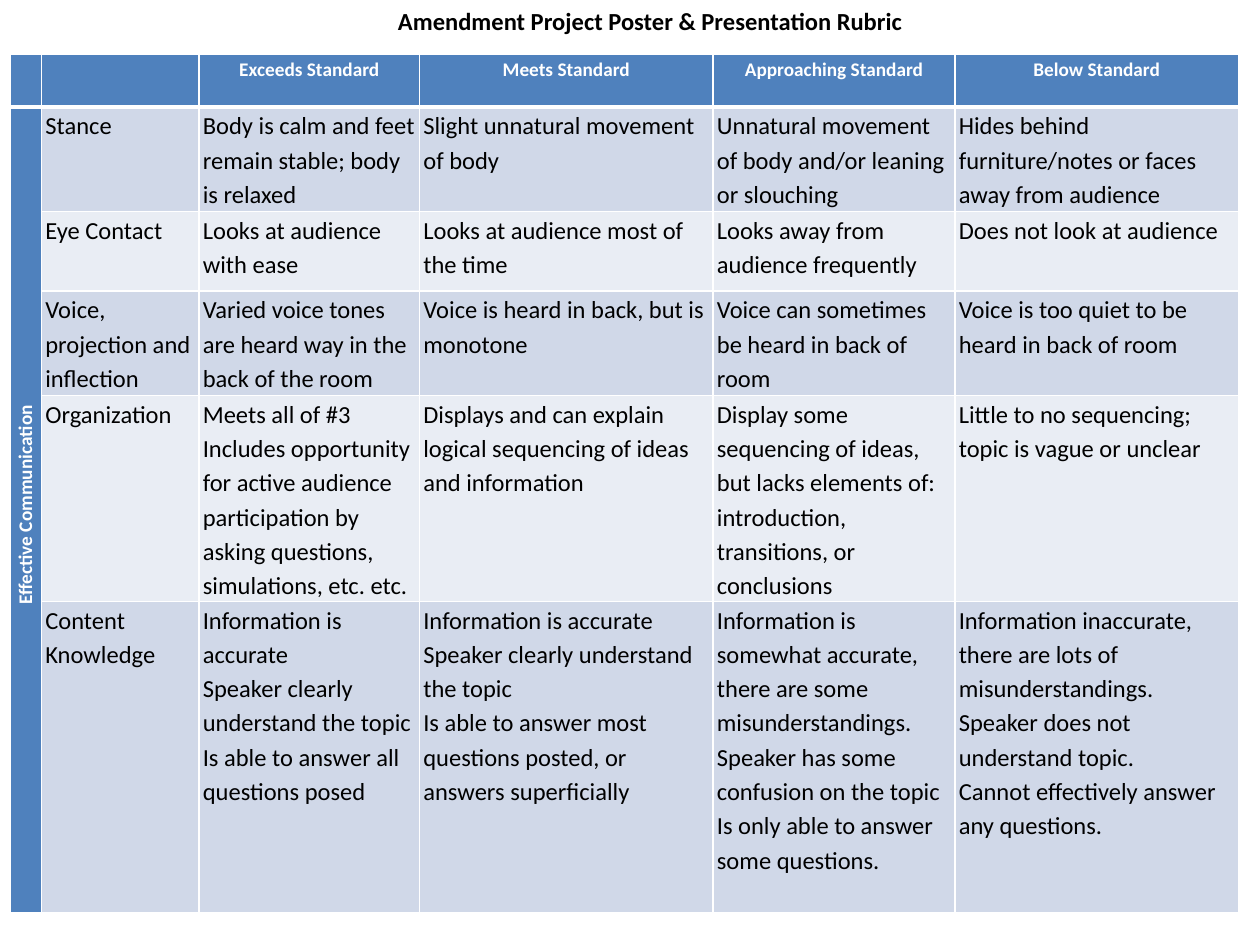
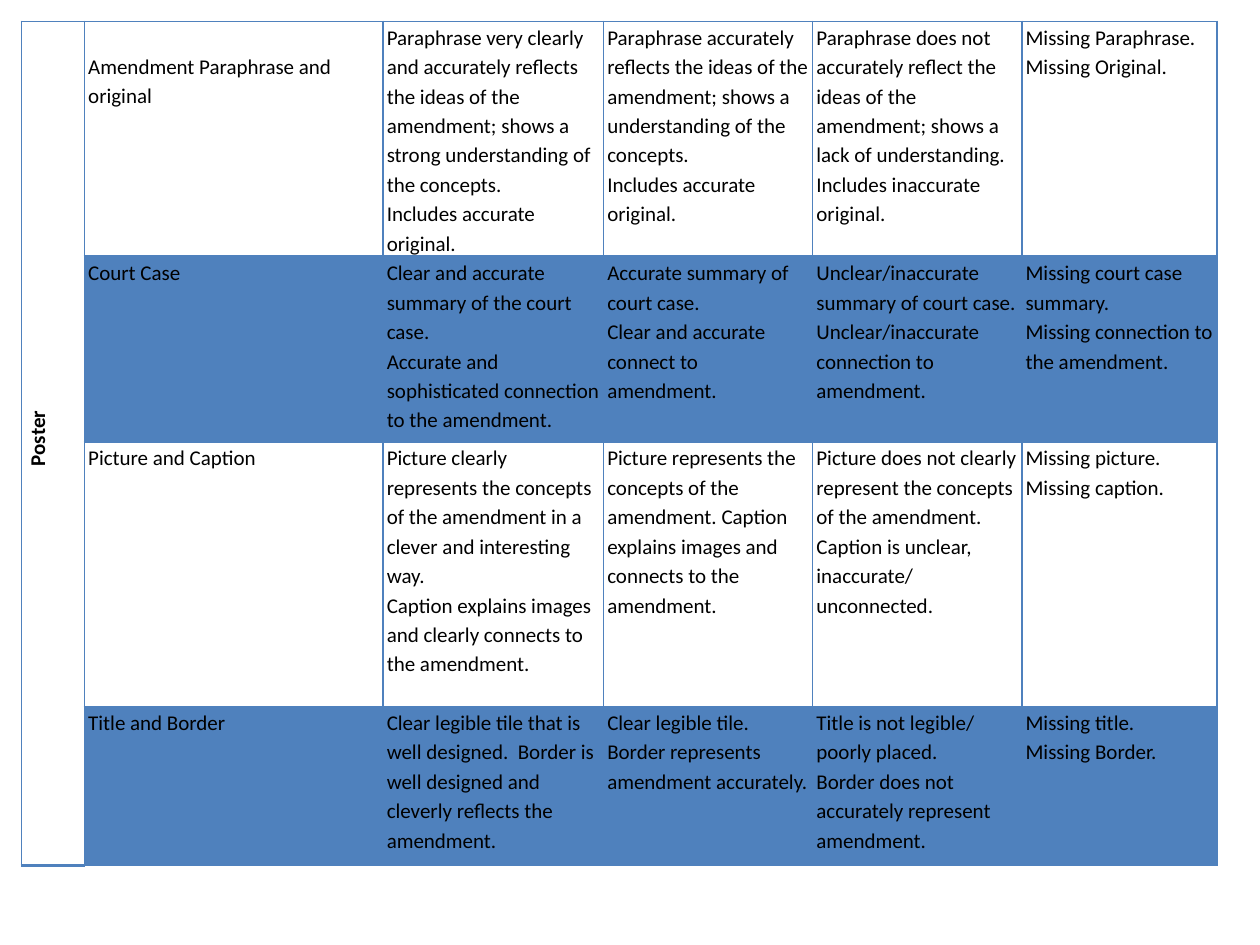
from dataclasses import dataclass

from lxml.etree import SubElement
from pptx import Presentation
from pptx.dml.color import RGBColor
from pptx.enum.text import MSO_ANCHOR, PP_ALIGN
from pptx.oxml.ns import qn
from pptx.util import Inches, Pt


@dataclass(frozen=True)
class Theme:
    font: str = "Calibri"
    blue: str = "4F81BD"
    dark: str = "D0D8E8"
    light: str = "E9EDF4"
    white: str = "FFFFFF"
    black: str = "000000"
    tint: int = 20
    title: int = 14
    head: int = 11
    body: int = 14
    small: int = 12
    space: float = 1.15


THEME = Theme()

HEADS = ["", "", "Exceeds Standard", "Meets Standard", "Approaching Standard", "Below Standard"]

SPEECH = [
    ["Stance",
     "Body is calm and feet remain stable; body is relaxed",
     "Slight unnatural movement of body",
     "Unnatural movement of body and/or leaning or slouching",
     "Hides behind furniture/notes or faces away from audience"],
    ["Eye Contact",
     "Looks at audience with ease",
     "Looks at audience most of the time",
     "Looks away from audience frequently",
     "Does not look at audience"],
    ["Voice, projection and inflection",
     "Varied voice tones are heard way in the back of the room",
     "Voice is heard in back, but is monotone",
     "Voice can sometimes be heard in back of room",
     "Voice is too quiet to be heard in back of room"],
    ["Organization",
     "Meets all of #3\nIncludes opportunity for active audience participation "
     "by asking questions, simulations, etc. etc.",
     "Displays and can explain logical sequencing of ideas and information",
     "Display some sequencing of ideas, but lacks elements of: introduction, "
     "transitions, or conclusions",
     "Little to no sequencing; topic is vague or unclear"],
    ["Content Knowledge",
     "Information is accurate\nSpeaker clearly understand the topic\n"
     "Is able to answer all questions posed",
     "Information is accurate\nSpeaker clearly understand the topic\n"
     "Is able to answer most questions posted, or answers superficially",
     "Information is somewhat accurate, there are some misunderstandings.\n"
     "Speaker has some confusion on the topic\nIs only able to answer some questions.",
     "Information inaccurate, there are lots of misunderstandings.\n"
     "Speaker does not understand topic.\nCannot effectively answer any questions."],
]

POSTER = [
    ["Amendment Paraphrase and original",
     "Paraphrase very clearly and accurately reflects the ideas of the amendment; "
     "shows a strong understanding of the concepts.\nIncludes accurate original.",
     "Paraphrase accurately reflects the ideas of the amendment; "
     "shows a understanding of the concepts.\nIncludes accurate original.",
     "Paraphrase does not accurately reflect the ideas of the amendment; "
     "shows a lack of understanding.\nIncludes inaccurate original.",
     "Missing Paraphrase.\nMissing Original."],
    ["Court Case",
     "Clear and accurate summary of the court case.\n"
     "Accurate and sophisticated connection to the amendment.",
     "Accurate summary of court case.\nClear and accurate connect to amendment.",
     "Unclear/inaccurate summary of court case.\n"
     "Unclear/inaccurate connection to amendment.",
     "Missing court case summary.\nMissing connection to the amendment."],
    ["Picture and Caption",
     "Picture clearly represents the concepts of the amendment in a clever and "
     "interesting way.\nCaption explains images and clearly connects to the amendment.",
     "Picture represents the concepts of the amendment. Caption explains images "
     "and connects to the amendment.",
     "Picture does not clearly represent the concepts of the amendment.\n"
     "Caption is unclear, inaccurate/ unconnected.",
     "Missing picture.\nMissing caption."],
    ["Title and Border",
     "Clear legible tile that is well designed.  Border is well designed and "
     "cleverly reflects the amendment.",
     "Clear legible tile.\nBorder represents amendment accurately.",
     "Title is not legible/ poorly placed.\n"
     "Border does not accurately represent amendment.",
     "Missing title.\nMissing Border."],
]


def style_text(frame, size, color, bold=False, align=PP_ALIGN.LEFT, space=None):
    for para in frame.paragraphs:
        para.alignment = align
        para.line_spacing = space
        for run in para.runs:
            font = run.font
            font.name, font.size, font.bold = THEME.font, Pt(size), bold
            font.color.rgb = RGBColor.from_string(color)


def fill_cell(cell, text, size, color, bold=False, align=PP_ALIGN.LEFT):
    cell.margin_left = cell.margin_right = Inches(0.03)
    cell.margin_top = cell.margin_bottom = 0
    cell.text_frame.text = text
    style_text(cell.text_frame, size, color, bold, align, THEME.space)


def paint_cell(cell, color, alpha=None):
    if color is None:
        cell.fill.background()
        return
    cell.fill.solid()
    cell.fill.fore_color.rgb = RGBColor.from_string(color)
    if alpha:
        tone = cell._tc.tcPr.find(".//" + qn("a:srgbClr"))
        SubElement(tone, qn("a:alpha"), val=str(alpha * 1000))


def edge_cell(cell, color, top=1, base=1):
    props = cell._tc.get_or_add_tcPr()
    for side, width in (("L", 1), ("R", 1), ("T", top), ("B", base)):
        line = SubElement(props, qn("a:ln" + side), w=str(Pt(width)))
        fill = SubElement(line, qn("a:solidFill"))
        SubElement(fill, qn("a:srgbClr"), val=color)


def turn_cell(cell, text, size, color):
    fill_cell(cell, text, size, color, True, PP_ALIGN.CENTER)
    cell._tc.tcPr.set("vert", "vert270")
    cell.text_frame.paragraphs[0]._p.get_or_add_pPr().set("marL", str(Inches(0.08)))


def add_grid(slide, left, top, cols, rows, color, thick):
    frame = slide.shapes.add_table(len(rows), len(cols), Inches(left), Inches(top),
                                   Inches(sum(cols)), Inches(sum(rows)))
    table = frame.table
    table.first_row = table.horz_banding = False
    for col, width in zip(table.columns, cols):
        col.width = Inches(width)
    for row, height in zip(table.rows, rows):
        row.height = Inches(height)
    for y in range(len(rows)):
        for x in range(len(cols)):
            edge_cell(table.cell(y, x), color, thick if y == 1 else 1, thick if y == 0 else 1)
    return table


def fill_body(table, start, data, size, fills):
    for y, items in enumerate(data):
        for x, text in enumerate(items, 1):
            cell = table.cell(start + y, x)
            fill_cell(cell, text, size, THEME.black)
            paint_cell(cell, *fills[y % 2])


def add_title(slide, left, top, width, height):
    box = slide.shapes.add_textbox(Inches(left), Inches(top), Inches(width), Inches(height))
    frame = box.text_frame
    frame.word_wrap = True
    frame.text = "Amendment Project Poster & Presentation Rubric"
    style_text(frame, THEME.title, THEME.black, True)


def speech_slide(slide, left, top):
    cols = [0.25, 1.25, 1.75, 2.33, 1.92, 2.25]
    rows = [0.42, 0.83, 0.63, 0.83, 1.63, 2.47]
    table = add_grid(slide, left, top, cols, rows, THEME.white, 3)
    for x, text in enumerate(HEADS):
        fill_cell(table.cell(0, x), text, THEME.head, THEME.white, True, PP_ALIGN.CENTER)
        paint_cell(table.cell(0, x), THEME.blue)
    side = table.cell(1, 0)
    side.merge(table.cell(len(SPEECH), 0))
    turn_cell(side, "Effective Communication", THEME.head, THEME.white)
    side.vertical_anchor = MSO_ANCHOR.MIDDLE
    paint_cell(side, THEME.blue)
    fill_body(table, 1, SPEECH, THEME.body, [(THEME.dark,), (THEME.light,)])
    add_title(slide, 3.06, 0, 4.25, 0.52)


def poster_slide(slide, left, top):
    cols = [0.5, 2.37, 1.75, 1.66, 1.66, 1.55]
    rows = [1.87, 1.47, 2.1, 1.26]
    table = add_grid(slide, left, top, cols, rows, THEME.blue, 2)
    side = table.cell(0, 0)
    side.merge(table.cell(len(POSTER) - 1, 0))
    turn_cell(side, "Poster", THEME.small, THEME.black)
    paint_cell(side, None)
    fill_body(table, 0, POSTER, THEME.small, [(None,), (THEME.blue, THEME.tint)])
    table.cell(0, 1).margin_top = Inches(0.23)


def main():
    deck = Presentation()
    deck.slide_width, deck.slide_height = Inches(10), Inches(7.5)
    blank = deck.slide_layouts[6]
    speech_slide(deck.slides.add_slide(blank), 0.08, 0.43)
    poster_slide(deck.slides.add_slide(blank), 0.17, 0.17)
    deck.save("out.pptx")


if __name__ == "__main__":
    main()
